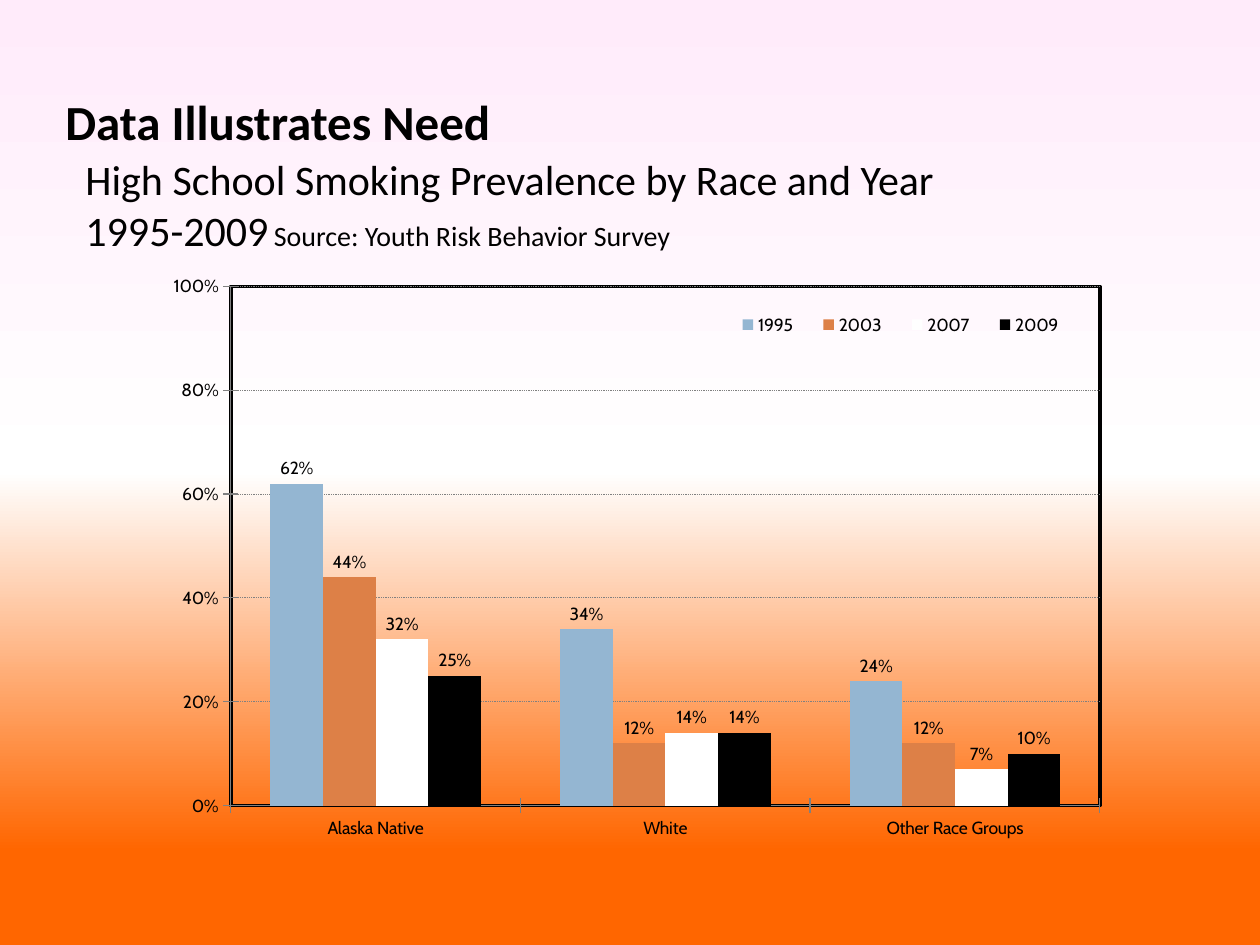
from lxml import etree
from pptx import Presentation
from pptx import util as u
from pptx.chart import data
from pptx.dml import color
from pptx.enum import chart as ch
from pptx.enum import dml
from pptx.oxml import ns

Inches, Pt = u.Inches, u.Pt
COLORS = {
    "ink": "000000", "grid": "808080", "orange": "FF6600", "white": "FFFFFF", "pink": "FFEBFA",
    "1995": "94B6D2", "2003": "DD8047", "2007": "FFFFFF", "2009": "000000",
}


def rgb(key):
    return color.RGBColor.from_string(COLORS[key])


def add_run(paragraph, words, size, font="Calibri", bold=False):
    run = paragraph.add_run()
    run.text = words
    run.font.size, run.font.name, run.font.bold = Pt(size), font, bold
    run.font.color.rgb = rgb("ink")


prs = Presentation()
prs.slide_width, prs.slide_height = Inches(10), Inches(7.5)
slide = prs.slides.add_slide(prs.slide_layouts[6])

backdrop = slide.background.fill
backdrop.gradient()
backdrop.gradient_angle = 90
stops = slide.background._cSld.find(".//" + ns.qn("a:gsLst"))
for stop in list(stops):
    stops.remove(stop)
for position, key in [(10, "orange"), (50, "white"), (100, "pink")]:
    stop = etree.SubElement(stops, ns.qn("a:gs"), pos=str(position * 1000))
    etree.SubElement(stop, ns.qn("a:srgbClr"), val=COLORS[key])

title = slide.shapes.add_textbox(Inches(0.42), Inches(0.68), Inches(9.08), Inches(0.57)).text_frame
title.word_wrap = True
add_run(title.paragraphs[0], "Data Illustrates Need", 28, bold=True)

subtitle = slide.shapes.add_textbox(Inches(0.58), Inches(1.17), Inches(8.92), Inches(1.08)).text_frame
subtitle.word_wrap = True
add_run(subtitle.paragraphs[0], "High School Smoking Prevalence by Race and Year", 24)
years_line = subtitle.add_paragraph()
add_run(years_line, "1995-2009", 24)
add_run(years_line, " ", 12, font="Times New Roman")
add_run(years_line, "Source: Youth Risk Behavior Survey", 16)

prevalence = data.CategoryChartData(number_format="0%")
prevalence.categories = ["Alaska Native", "White", "Other Race Groups"]
for year, rates in {
    "1995": (0.62, 0.34, 0.24),
    "2003": (0.44, 0.12, 0.12),
    "2007": (0.32, 0.14, 0.07),
    "2009": (0.25, 0.14, 0.10),
}.items():
    prevalence.add_series(year, rates)

smoking = slide.shapes.add_chart(
    ch.XL_CHART_TYPE.COLUMN_CLUSTERED, Inches(1.08), Inches(2), Inches(7.83), Inches(5.25), prevalence
).chart
smoking.has_title = False
smoking.font.size, smoking.font.name = Pt(10), "Cabin"
smoking.font.color.rgb = rgb("ink")

bars = smoking.plots[0]
bars.gap_width, bars.overlap, bars.vary_by_categories = 150, 0, False
for series in bars.series:
    series.format.fill.solid()
    series.format.fill.fore_color.rgb = rgb(series.name)
    series.invert_if_negative = False
    labels = series.data_labels
    labels.show_value = True
    labels.number_format, labels.number_format_is_linked = "0%", False
    labels.position = ch.XL_LABEL_POSITION.OUTSIDE_END

race_axis, rate_axis = smoking.category_axis, smoking.value_axis
for axis in (race_axis, rate_axis):
    axis.major_tick_mark = ch.XL_TICK_MARK.CROSS
    axis.format.line.color.rgb = rgb("grid")
    axis.format.line.width = Pt(0.75)
rate_axis.minimum_scale, rate_axis.maximum_scale, rate_axis.major_unit = 0, 1, 0.2
rate_axis.tick_labels.number_format = "0%"
rate_axis.tick_labels.number_format_is_linked = False
gridlines = rate_axis.major_gridlines.format.line
gridlines.color.rgb = rgb("grid")
gridlines.width = Pt(0.5)
gridlines.dash_style = dml.MSO_LINE.ROUND_DOT

smoking.has_legend = True
legend = smoking.legend
legend.position = ch.XL_LEGEND_POSITION.CORNER
legend.include_in_layout = True

plot_area = smoking._chartSpace.chart.plotArea
for part, target, box in [
    (plot_area, "inner", (0.096, 0.052, 0.881, 0.785)),
    (legend._element, None, (0.59, 0.08, 0.37, 0.06)),
]:
    for old in part.findall(ns.qn("c:layout")):
        part.remove(old)
    layout = etree.Element(ns.qn("c:layout"))
    manual = etree.SubElement(layout, ns.qn("c:manualLayout"))
    if target:
        etree.SubElement(manual, ns.qn("c:layoutTarget"), val=target)
    for side in "xy":
        etree.SubElement(manual, ns.qn(f"c:{side}Mode"), val="edge")
    for side, share in zip("xywh", box):
        etree.SubElement(manual, ns.qn(f"c:{side}"), val=f"{share:.3f}")
    part.insert(0 if target else 1, layout)

frame = etree.SubElement(plot_area, ns.qn("c:spPr"))
etree.SubElement(frame, ns.qn("a:noFill"))
border = etree.SubElement(frame, ns.qn("a:ln"), w=str(Pt(2)))
border_fill = etree.SubElement(border, ns.qn("a:solidFill"))
etree.SubElement(border_fill, ns.qn("a:srgbClr"), val=COLORS["ink"])

prs.save("out.pptx")
